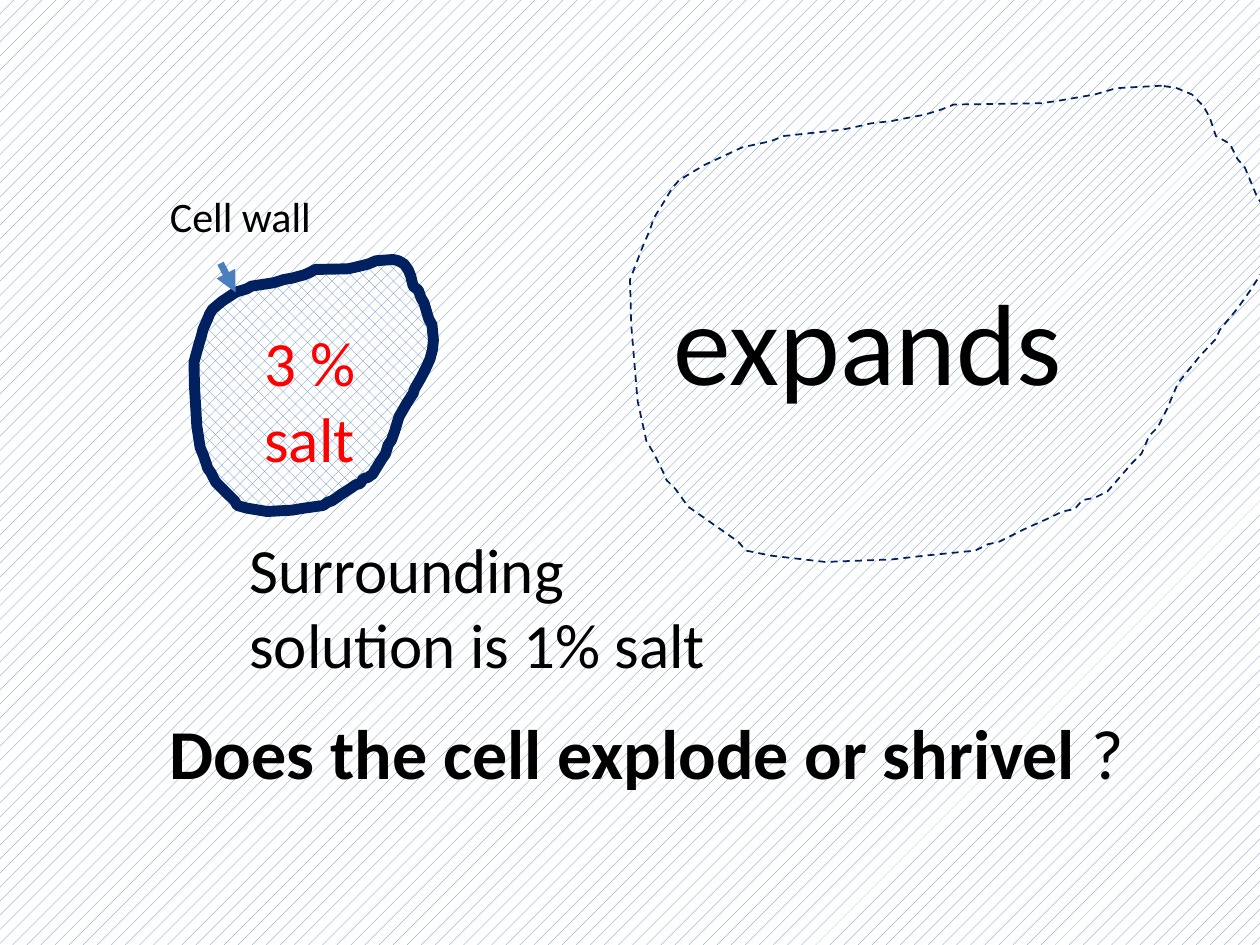
from lxml.etree import SubElement
from pptx import Presentation
from pptx.dml.color import RGBColor
from pptx.enum.dml import MSO_LINE, MSO_PATTERN
from pptx.enum.shapes import MSO_CONNECTOR
from pptx.enum.text import MSO_AUTO_SIZE
from pptx.oxml.ns import qn
from pptx.util import Inches, Pt

BLUE = RGBColor(0x4F, 0x81, 0xBD)
ARROW_BLUE = RGBColor(0x4B, 0x7E, 0xBC)
NAVY = RGBColor(0x00, 0x20, 0x60)
RED = RGBColor(0xFF, 0x00, 0x00)
BLACK = RGBColor(0x00, 0x00, 0x00)
WHITE = RGBColor(0xFF, 0xFF, 0xFF)
FONT = "Calibri"

CELL_WIDTH, CELL_HEIGHT = 508, 378
CELL_OUTLINE = [
    (422, 0), (386, 2), (369, 7), (340, 12), (326, 14), (257, 15), (247, 19),
    (234, 23), (218, 26), (208, 28), (191, 30), (178, 33), (168, 35), (122, 40),
    (112, 44), (89, 49), (59, 63), (39, 75), (33, 82), (29, 89), (19, 105),
    (16, 114), (10, 128), (0, 154), (1, 190), (6, 250), (13, 282), (19, 292),
    (26, 306), (29, 313), (36, 320), (46, 334), (66, 348), (86, 362), (92, 369),
    (112, 373), (155, 378), (208, 376), (234, 373), (274, 369), (284, 364),
    (293, 362), (313, 352), (333, 343), (343, 338), (353, 336), (359, 329),
    (369, 327), (379, 322), (399, 299), (406, 292), (412, 278), (419, 271),
    (426, 257), (435, 236), (452, 215), (465, 201), (468, 194), (482, 177),
    (492, 163), (501, 149), (506, 135), (508, 121), (505, 98), (498, 89),
    (488, 65), (482, 58), (476, 46), (465, 40), (460, 25), (455, 16),
    (446, 7), (434, 2),
]


def set_pattern(fill, pattern):
    fill.patterned()
    fill.pattern = pattern
    fill.fore_color.rgb = BLUE
    fill.back_color.rgb = WHITE


def add_cell(slide, left, top, width, height, pattern, line_width, dash=None):
    scale = (Inches(width) / CELL_WIDTH, Inches(height) / CELL_HEIGHT)
    builder = slide.shapes.build_freeform(*CELL_OUTLINE[0], scale=scale)
    builder.add_line_segments(CELL_OUTLINE[1:], close=True)
    cell = builder.convert_to_shape(Inches(left), Inches(top))
    cell.shadow.inherit = False
    set_pattern(cell.fill, pattern)
    cell.line.color.rgb = NAVY
    cell.line.width = Pt(line_width)
    if dash is not None:
        cell.line.dash_style = dash


def add_text(slide, left, top, width, height, runs, size, color=BLACK):
    box = slide.shapes.add_textbox(
        Inches(left), Inches(top), Inches(width), Inches(height))
    frame = box.text_frame
    frame.word_wrap = True
    frame.auto_size = MSO_AUTO_SIZE.SHAPE_TO_FIT_TEXT
    paragraph = frame.paragraphs[0]
    for text, bold in runs:
        run = paragraph.add_run()
        run.text = text
        run.font.name = FONT
        run.font.size = Pt(size)
        run.font.bold = bold
        run.font.color.rgb = color


def add_arrow(slide, start_x, start_y, end_x, end_y):
    arrow = slide.shapes.add_connector(
        MSO_CONNECTOR.STRAIGHT,
        Inches(start_x), Inches(start_y), Inches(end_x), Inches(end_y))
    arrow.line.color.rgb = ARROW_BLUE
    arrow.line.width = Pt(4)
    SubElement(arrow.line._get_or_add_ln(), qn("a:tailEnd"), type="triangle")
    SubElement(arrow._element.spPr, qn("a:effectLst"))


def add_salty_cell(slide, left, top, width, height):
    add_cell(slide, left, top, width, height, MSO_PATTERN.PERCENT_30, 6.25)
    add_text(slide, left + 0.46, top + 0.46, 1.17, 1.31,
             [("3 % salt", False)], 36, RED)
    add_text(slide, left - 0.29, top - 0.6, 1.58, 0.5,
             [("Cell wall", False)], 24)
    add_arrow(slide, left + 0.21, top + 0.03, left + 0.33, top + 0.26)


def add_expanded_cell(slide, left, top, width, height):
    add_cell(slide, left, top, width, height,
             MSO_PATTERN.PERCENT_20, 1, MSO_LINE.DASH)
    add_text(slide, left + 0.25, top + 1.41, 3.75, 1.21,
             [("expands", False)], 66)


def main():
    presentation = Presentation()
    presentation.slide_width = Inches(10)
    presentation.slide_height = Inches(7.5)
    slide = presentation.slides.add_slide(presentation.slide_layouts[6])
    set_pattern(slide.background.fill, MSO_PATTERN.PERCENT_10)

    add_salty_cell(slide, 1.54, 2.06, 1.9, 2)
    add_text(slide, 1.88, 4.16, 4.08, 1.31,
             [("Surrounding solution is 1% salt", False)], 36)
    add_text(slide, 1.25, 5.58, 8.08, 0.77,
             [("Does the cell explode or shrivel ", True), ("?", False)], 40)
    add_expanded_cell(slide, 5, 0.68, 5.08, 3.78)
    presentation.save("out.pptx")


if __name__ == "__main__":
    main()
